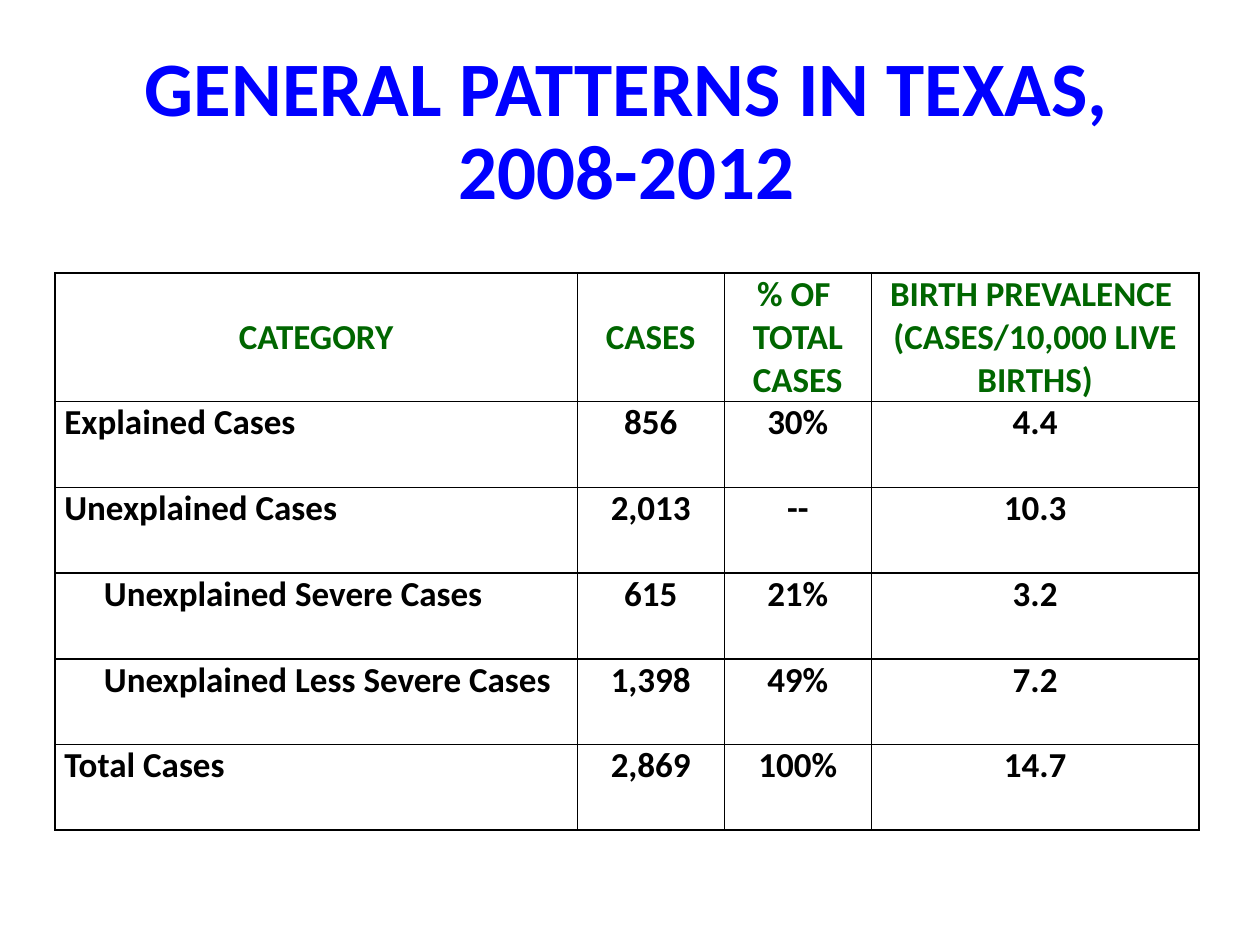
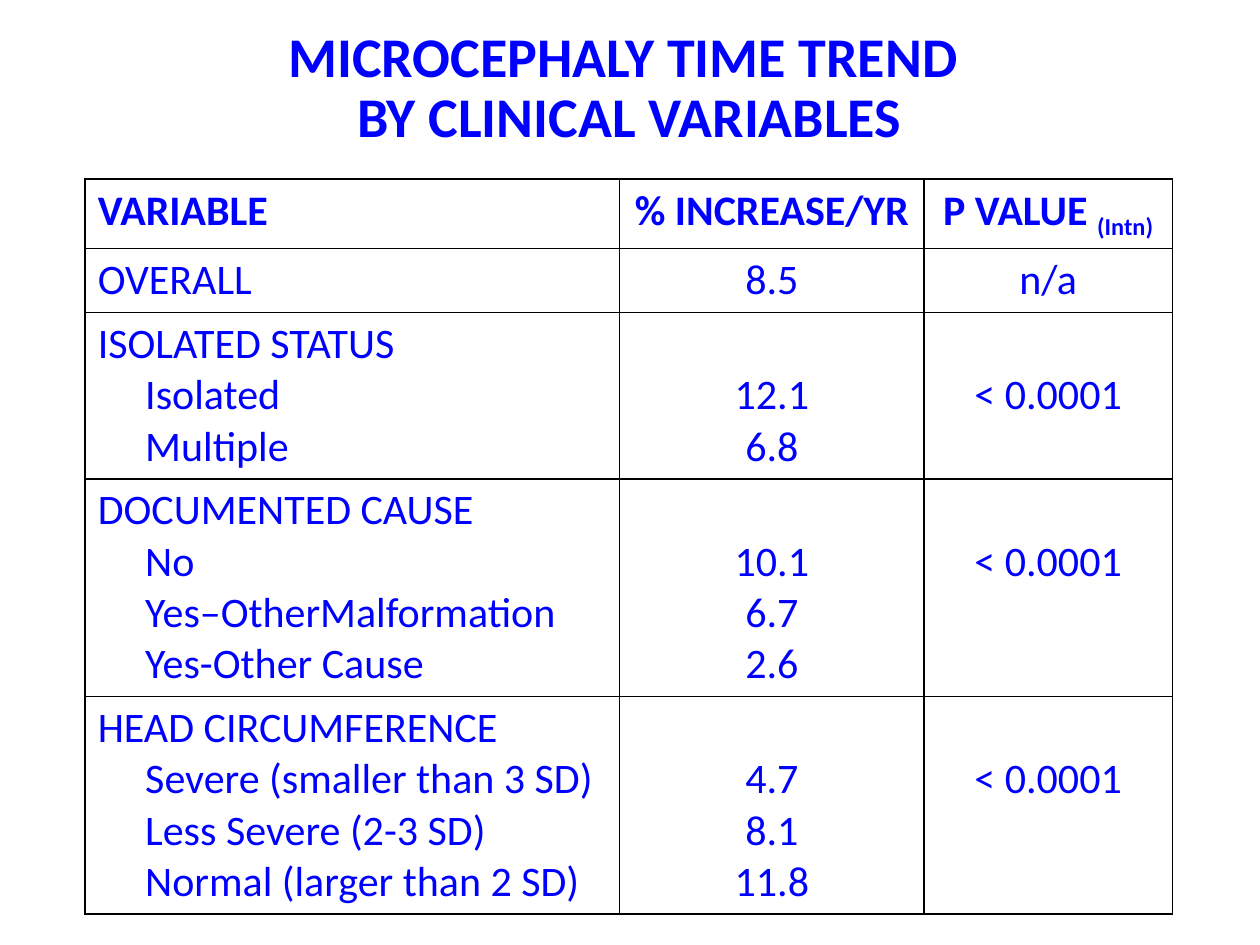
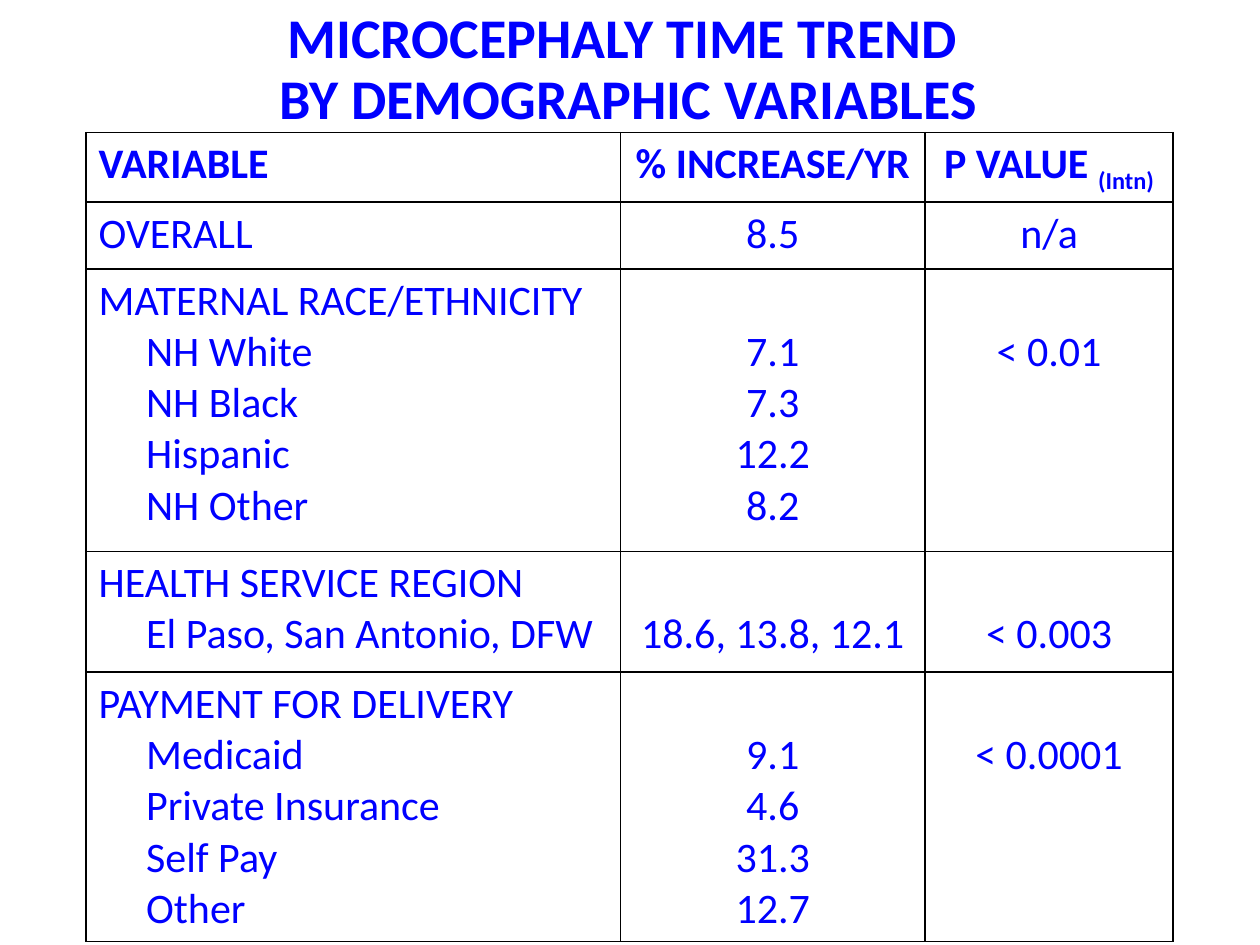
from lxml.etree import SubElement
from pptx import Presentation
from pptx.dml.color import RGBColor
from pptx.enum.text import MSO_ANCHOR as Anchor, MSO_AUTO_SIZE as AutoSize, PP_ALIGN as Align
from pptx.oxml.ns import qn
from pptx.util import Pt

BLUE = RGBColor(0x00, 0x00, 0xFF)
GREEN = RGBColor(0x00, 0x66, 0x00)
BLACK = RGBColor(0x00, 0x00, 0x00)
FONT = "Calibri"

TREND_SIZE = 24
TREND_LINE = 29.3
TREND_COLUMNS = [305.4, 174, 141.8]
TREND_HEADER = ["VARIABLE", "% INCREASE/YR", "P VALUE "]
OVERALL = ["OVERALL", "8.5", "n/a"]

PREVALENCE_COLUMNS = [298.5, 84, 84, 187.3]
PREVALENCE_HEADER = ["CATEGORY", "CASES", "% OF \nTOTAL CASES",
                     "BIRTH PREVALENCE \n(CASES/10,000 LIVE BIRTHS)"]
# Indent, then the four cells of the row
PREVALENCE_ROWS = [
    (0, ["Explained Cases", "856", "30%", "4.4"]),
    (0, ["Unexplained Cases", "2,013", "--", "10.3"]),
    (22.6, ["Unexplained Severe Cases", "615", "21%", "3.2"]),
    (22.6, ["Unexplained Less Severe Cases", "1,398", "49%", "7.2"]),
    (0, ["Total Cases", "2,869", "100%", "14.7"]),
]

# Heading, categories, yearly increases, P value
CLINICAL_GROUPS = [
    ("ISOLATED STATUS", ["Isolated", "Multiple"], ["12.1", "6.8"], "< 0.0001"),
    ("DOCUMENTED CAUSE", ["No", "Yes–OtherMalformation", "Yes-Other Cause"],
     ["10.1", "6.7", "2.6"], "< 0.0001"),
    ("HEAD CIRCUMFERENCE",
     ["Severe (smaller than 3 SD)", "Less Severe (2-3 SD)", "Normal (larger than 2 SD)"],
     ["4.7", "8.1", "11.8"], "< 0.0001"),
]
DEMOGRAPHIC_GROUPS = [
    ("MATERNAL RACE/ETHNICITY", ["NH White", "NH Black", "Hispanic", "NH Other"],
     ["7.1", "7.3", "12.2", "8.2"], "< 0.01"),
    ("HEALTH SERVICE REGION", ["El Paso, San Antonio, DFW"], ["18.6, 13.8, 12.1"], "< 0.003"),
    ("PAYMENT FOR DELIVERY", ["Medicaid", "Private Insurance", "Self Pay", "Other"],
     ["9.1", "4.6", "31.3", "12.7"], "< 0.0001"),
]


def format_run(run, size, color, bold):
    run.font.name = FONT
    run.font.size = Pt(size)
    run.font.bold = bold
    run.font.color.rgb = color


def write_text(frame, text, size=TREND_SIZE, color=BLUE, bold=False, align=Align.LEFT,
               spacing=None, indents=()):
    """Write one paragraph per line; indents holds a left indent for each line."""
    frame.text = text
    for paragraph in frame.paragraphs:
        paragraph.alignment = align
        if spacing:
            paragraph.line_spacing = spacing
        for run in paragraph.runs:
            format_run(run, size, color, bold)
    for paragraph, indent in zip(frame.paragraphs, indents):
        properties = paragraph._p.get_or_add_pPr()
        properties.set("marL", str(Pt(indent)))
        properties.set("indent", "0")


def add_titled_slide(presentation, title, box, size):
    slide = presentation.slides.add_slide(presentation.slide_layouts[5])
    shape = slide.shapes.title
    shape.left, shape.top, shape.width, shape.height = map(Pt, box)
    frame = shape.text_frame
    frame.word_wrap = True
    frame.auto_size = AutoSize.NONE
    frame.vertical_anchor = Anchor.MIDDLE
    write_text(frame, title, size=size, bold=True, align=Align.CENTER, spacing=0.9)
    return slide


def add_border(cell):
    properties = cell._tc.get_or_add_tcPr()
    for position, side in enumerate(("a:lnL", "a:lnR", "a:lnT", "a:lnB")):
        line = SubElement(properties, qn(side), w=str(Pt(1)))
        fill = SubElement(line, qn("a:solidFill"))
        SubElement(fill, qn("a:srgbClr"), val=str(BLACK))
        properties.insert(position, line)


def add_grid(slide, left, top, widths, heights):
    """Add an unfilled table with a black border round every cell."""
    frame = slide.shapes.add_table(len(heights), len(widths), Pt(left), Pt(top),
                                   Pt(sum(widths)), Pt(sum(heights)))
    table = frame.table
    table.first_row = table.horz_banding = False
    for column, width in zip(table.columns, widths):
        column.width = Pt(width)
    for row, height in zip(table.rows, heights):
        row.height = Pt(height)
    for cell in table.iter_cells():
        cell.fill.background()
        add_border(cell)
    return table


def add_prevalence_table(slide, left, top):
    heights = [73.2] + [49] * len(PREVALENCE_ROWS)
    table = add_grid(slide, left, top, PREVALENCE_COLUMNS, heights)
    for cell in table.iter_cells():
        cell.margin_left = cell.margin_right = Pt(5.4)
        cell.margin_top = cell.margin_bottom = 0
    for column, text in enumerate(PREVALENCE_HEADER):
        cell = table.cell(0, column)
        cell.vertical_anchor = Anchor.MIDDLE
        write_text(cell.text_frame, text, size=20, color=GREEN, bold=True, align=Align.CENTER)
    for row, (indent, texts) in enumerate(PREVALENCE_ROWS, start=1):
        for column, text in enumerate(texts):
            write_text(table.cell(row, column).text_frame, text, size=20, color=BLACK, bold=True,
                       align=Align.CENTER if column else Align.LEFT,
                       indents=() if column else [indent])


def add_trend_table(slide, left, top, heights, groups):
    table = add_grid(slide, left, top, TREND_COLUMNS, heights)
    # Header and overall rows
    for row, texts in enumerate((TREND_HEADER, OVERALL)):
        for column, text in enumerate(texts):
            write_text(table.cell(row, column).text_frame, text, bold=row == 0,
                       align=Align.CENTER if column else Align.LEFT)
    subscript = table.cell(0, 2).text_frame.paragraphs[0].add_run()
    subscript.text = "(Intn)"
    format_run(subscript, TREND_SIZE, BLUE, True)
    subscript.font._element.set("baseline", "-25000")
    # Groups: the values start one line below the heading
    for row, (heading, categories, increases, p_value) in enumerate(groups, start=2):
        write_text(table.cell(row, 0).text_frame, "\n".join([heading, *categories]),
                   indents=[0] + [27.1] * len(categories))
        for column, text in ((1, "\n".join(increases)), (2, p_value)):
            cell = table.cell(row, column)
            cell.margin_top = Pt(3.6 + TREND_LINE)
            write_text(cell.text_frame, text, align=Align.CENTER)


def main():
    presentation = Presentation()
    presentation.slide_width, presentation.slide_height = Pt(720), Pt(540)

    slide = add_titled_slide(presentation, "GENERAL PATTERNS IN TEXAS, 2008-2012",
                             (48, 24, 620.6, 104.4), 44)
    add_prevalence_table(slide, 31.4, 156)

    slide = add_titled_slide(presentation, "MICROCEPHALY TIME TREND \nBY CLINICAL VARIABLES",
                             (49.5, 12, 620.6, 78), 32)
    add_trend_table(slide, 48.7, 102.2, [39.4, 36.6, 94.9, 124.3, 124.3], CLINICAL_GROUPS)

    slide = add_titled_slide(presentation, "MICROCEPHALY TIME TREND \nBY DEMOGRAPHIC VARIABLES",
                             (49, 1.5, 620.6, 78), 32)
    add_trend_table(slide, 49.2, 75.8, [39.6, 38.2, 161.3, 69.1, 153.9], DEMOGRAPHIC_GROUPS)

    presentation.save("out.pptx")


if __name__ == "__main__":
    main()
